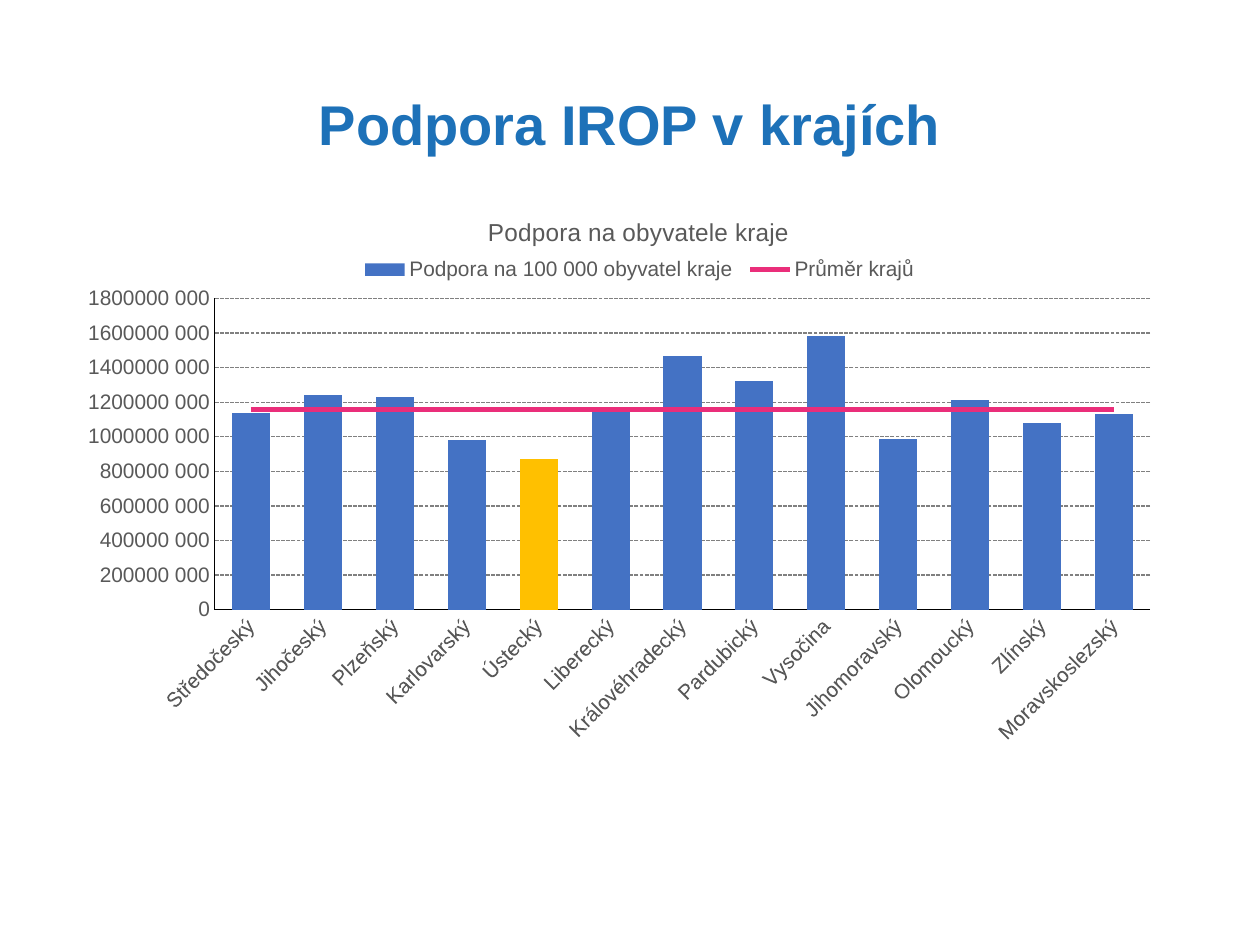
from dataclasses import dataclass

from lxml.etree import SubElement
from pptx import Presentation
from pptx.chart.data import CategoryChartData
from pptx.dml.color import RGBColor
from pptx.enum.chart import XL_CHART_TYPE as ChartType
from pptx.enum.chart import XL_LEGEND_POSITION as LegendPos
from pptx.enum.chart import XL_MARKER_STYLE as Marker
from pptx.enum.chart import XL_TICK_MARK as Tick
from pptx.enum.dml import MSO_LINE as Dash
from pptx.enum.text import MSO_ANCHOR as Anchor
from pptx.enum.text import PP_ALIGN as Align
from pptx.oxml import parse_xml
from pptx.oxml.ns import nsdecls, qn
from pptx.util import Inches, Pt

FONT = "Arial"
TITLE_BLUE, GREY, BLACK, GRID = "1D71B8", "595959", "000000", "808080"
BAR_BLUE, HIGHLIGHT, AVERAGE_PINK = "4472C4", "FFC000", "EA2E7A"
W, H = 10, 7.5

MILLION = 1_000_000
SUPPORT = {
    "Středočeský": 1140, "Jihočeský": 1240, "Plzeňský": 1230,
    "Karlovarský": 980, "Ústecký": 870, "Liberecký": 1150,
    "Královéhradecký": 1470, "Pardubický": 1320, "Vysočina": 1580,
    "Jihomoravský": 990, "Olomoucký": 1210, "Zlínský": 1080,
    "Moravskoslezský": 1130,
}
AVERAGE = 1160
HIGHLIGHTED = "Ústecký"


@dataclass
class Box:
    """Left, top, width and height as shares of the surrounding area."""
    x: float
    y: float
    w: float = 0
    h: float = 0

    def on_slide(self):
        return [Inches(v) for v in (self.x * W, self.y * H, self.w * W, self.h * H)]


def rgb(hex_color: str) -> RGBColor:
    return RGBColor.from_string(hex_color)


def set_font(font, size: float, color: str, bold: bool = False) -> None:
    font.name, font.size, font.bold = FONT, Pt(size), bold
    font.color.rgb = rgb(color)


def set_line(line, color: str, width: float) -> None:
    line.color.rgb = rgb(color)
    line.width = Pt(width)


def place(element, box: Box, index: int, inner: bool = False) -> None:
    """Give a chart part a manual layout, as its child number index."""
    for old in element.findall(qn("c:layout")):
        element.remove(old)
    layout = parse_xml(f"<c:layout {nsdecls('c')}><c:manualLayout/></c:layout>")
    values = {"layoutTarget": "inner"} if inner else {}
    values |= {"xMode": "edge", "yMode": "edge", "x": box.x, "y": box.y}
    if box.w:
        values |= {"w": box.w, "h": box.h}
    for tag, value in values.items():
        SubElement(layout[0], qn(f"c:{tag}")).set("val", str(value))
    element.insert(index, layout)


def move_last_series_to_line(chart) -> None:
    """Turn the last column series into a line on the same axes."""
    bar_chart = chart._chartSpace.find(f".//{qn('c:barChart')}")
    ser = bar_chart.findall(qn("c:ser"))[-1]
    for invert in ser.findall(qn("c:invertIfNegative")):
        ser.remove(invert)
    line_chart = parse_xml(
        f'<c:lineChart {nsdecls("c")}><c:grouping val="standard"/>'
        '<c:varyColors val="0"/><c:marker val="1"/></c:lineChart>')
    line_chart.insert(2, ser)
    for axis in bar_chart.findall(qn("c:axId")):
        SubElement(line_chart, qn("c:axId")).set("val", axis.get("val"))
    bar_chart.addnext(line_chart)


def add_title(slide, text: str, box: Box) -> None:
    tf = slide.shapes.add_textbox(*box.on_slide()).text_frame
    tf.word_wrap = True
    tf.vertical_anchor = Anchor.MIDDLE
    p = tf.paragraphs[0]
    p.text, p.alignment, p.line_spacing = text, Align.CENTER, 0.9
    set_font(p.runs[0].font, 32, TITLE_BLUE, bold=True)


def style_axes(chart) -> None:
    category, value = chart.category_axis, chart.value_axis
    for axis in (category, value):
        axis.major_tick_mark = axis.minor_tick_mark = Tick.NONE
        set_font(axis.tick_labels.font, 12, GREY)
        set_line(axis.format.line, BLACK, 0.75)
    category._element.find(qn("c:txPr")).find(qn("a:bodyPr")).set("rot", "-2700000")
    value.minimum_scale, value.maximum_scale = 0, 1800 * MILLION
    value.major_unit = 200 * MILLION
    value.tick_labels.number_format = r"#\ ##0"
    value.tick_labels.number_format_is_linked = False
    grid = value.major_gridlines.format.line
    set_line(grid, GRID, 0.75)
    grid.dash_style = Dash.SQUARE_DOT


def add_support_chart(slide, box: Box) -> None:
    data = CategoryChartData()
    data.categories = list(SUPPORT)
    data.add_series("Podpora na 100 000 obyvatel kraje",
                    [v * MILLION for v in SUPPORT.values()])
    data.add_series("Průměr krajů", [AVERAGE * MILLION] * len(SUPPORT))
    chart = slide.shapes.add_chart(
        ChartType.COLUMN_CLUSTERED, *box.on_slide(), data).chart
    set_font(chart.font, 10, BLACK)
    move_last_series_to_line(chart)
    style_axes(chart)

    bars, line = chart.plots
    bars.gap_width, bars.vary_by_categories = 89, False
    support, average = bars.series[0], line.series[0]
    point = support.points[list(SUPPORT).index(HIGHLIGHTED)]
    for part, color in ((support, BAR_BLUE), (point, HIGHLIGHT)):
        part.format.fill.solid()
        part.format.fill.fore_color.rgb = rgb(color)
    set_line(average.format.line, AVERAGE_PINK, 2.75)
    average.marker.style = Marker.NONE
    average.smooth = False

    title = chart.chart_title
    p = title.text_frame.paragraphs[0]
    p.text = "Podpora na obyvatele kraje"
    set_font(p.runs[0].font, 14, GREY)
    chart.has_legend = True
    legend = chart.legend
    legend.position, legend.include_in_layout = LegendPos.TOP, False
    set_font(legend.font, 12, GREY)

    plot_area = chart._chartSpace.find(f".//{qn('c:plotArea')}")
    place(title._element, Box(0.36, 0.04), 1)
    place(legend._element, Box(0.24, 0.11, 0.53, 0.06), 1)
    place(plot_area, Box(0.11, 0.19, 0.87, 0.54), 0, inner=True)


def main() -> None:
    prs = Presentation()
    prs.slide_width, prs.slide_height = Inches(W), Inches(H)
    slide = prs.slides.add_slide(prs.slide_layouts[6])
    add_title(slide, "Podpora IROP v krajích", Box(0.07, 0.04, 0.86, 0.19))
    add_support_chart(slide, Box(0.07, 0.2, 0.86, 0.61))
    prs.save("out.pptx")


if __name__ == "__main__":
    main()
